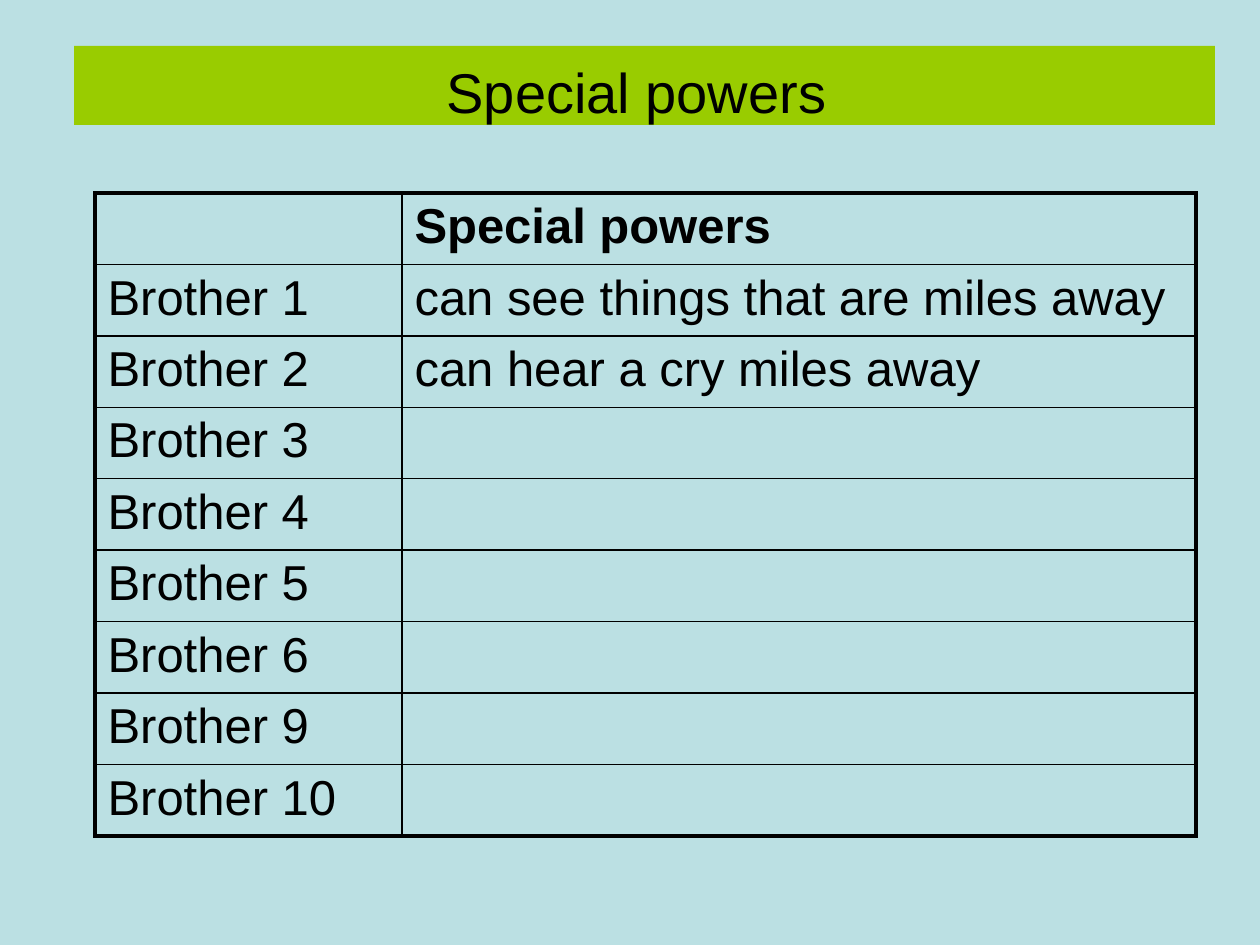
from typing import NamedTuple

from lxml.etree import SubElement
from pptx import Presentation
from pptx.dml.color import RGBColor
from pptx.enum.text import MSO_ANCHOR as Anchor, MSO_AUTO_SIZE as AutoSize, PP_ALIGN as Align
from pptx.oxml.ns import qn
from pptx.util import Emu, Pt

PX_PER_INCH = 126
FONT = "Arial"
BLACK, GREEN, PALE_BLUE = "000000", "99CC00", "BBE0E3"
INNER_LINE, OUTER_LINE = 1, 2.25


class Box(NamedTuple):
    left: int
    top: int
    width: int
    height: int


class Power(NamedTuple):
    brother: str
    ability: str = ""


TITLE_BOX = Box(74, 46, 1141, 79)
TABLE_BOX = Box(95, 193, 1101, 643)
COLUMN_WIDTHS = (307, 794)
HEADER = Power("", "Special powers")
POWERS = (
    Power("Brother 1", "can see things that are miles away"),
    Power("Brother 2", "can hear a cry miles away"),
    *(Power(f"Brother {number}") for number in (3, 4, 5, 6, 9, 10)),
)


def px(length: int) -> Emu:
    return Emu(round(length * 914400 / PX_PER_INCH))


def color(hex_code: str) -> RGBColor:
    return RGBColor.from_string(hex_code)


def write(frame, text: str, *, size: int, bold: bool = False, align=Align.LEFT) -> None:
    paragraph = frame.paragraphs[0]
    paragraph.alignment = align
    run = paragraph.add_run()
    run.text = text
    run.font.name = FONT
    run.font.size = Pt(size)
    run.font.bold = bold
    run.font.color.rgb = color(BLACK)


def set_borders(cell, **widths: float) -> None:
    """Draw solid black borders; keys are L, R, T and B, widths in points."""
    properties = cell._tc.get_or_add_tcPr()
    for position, side in enumerate("LRTB"):
        line = SubElement(properties, qn(f"a:ln{side}"), w=str(Pt(widths[side])))
        fill = SubElement(line, qn("a:solidFill"))
        SubElement(fill, qn("a:srgbClr"), val=BLACK)
        properties.insert(position, line)


def draw_title(slide, box: Box) -> None:
    title = slide.shapes.title
    title.left, title.top, title.width, title.height = map(px, box)
    title.fill.solid()
    title.fill.fore_color.rgb = color(GREEN)
    frame = title.text_frame
    frame.auto_size = AutoSize.NONE
    frame.vertical_anchor = Anchor.TOP
    frame.margin_top, frame.margin_bottom = px(12), 0
    write(frame, "Special powers ", size=32, align=Align.CENTER)


def draw_powers_table(slide, box: Box, rows: tuple[Power, ...]) -> None:
    table = slide.shapes.add_table(len(rows), len(COLUMN_WIDTHS), *map(px, box)).table
    table.first_row = table.horz_banding = False
    for column, width in zip(table.columns, COLUMN_WIDTHS):
        column.width = px(width)

    last_row, last_column = len(rows) - 1, len(COLUMN_WIDTHS) - 1
    for row, power in enumerate(rows):
        for column, text in enumerate(power):
            cell = table.cell(row, column)
            cell.fill.background()
            set_borders(
                cell,
                L=OUTER_LINE if column == 0 else INNER_LINE,
                R=OUTER_LINE if column == last_column else INNER_LINE,
                T=OUTER_LINE if row == 0 else INNER_LINE,
                B=OUTER_LINE if row == last_row else INNER_LINE,
            )
            if text:
                write(cell.text_frame, text, size=28, bold=row == 0)


def main() -> None:
    presentation = Presentation()
    presentation.slide_width, presentation.slide_height = px(1260), px(945)
    slide = presentation.slides.add_slide(presentation.slide_layouts.get_by_name("Title Only"))
    slide.background.fill.solid()
    slide.background.fill.fore_color.rgb = color(PALE_BLUE)
    draw_title(slide, TITLE_BOX)
    draw_powers_table(slide, TABLE_BOX, (HEADER, *POWERS))
    presentation.save("out.pptx")


if __name__ == "__main__":
    main()
